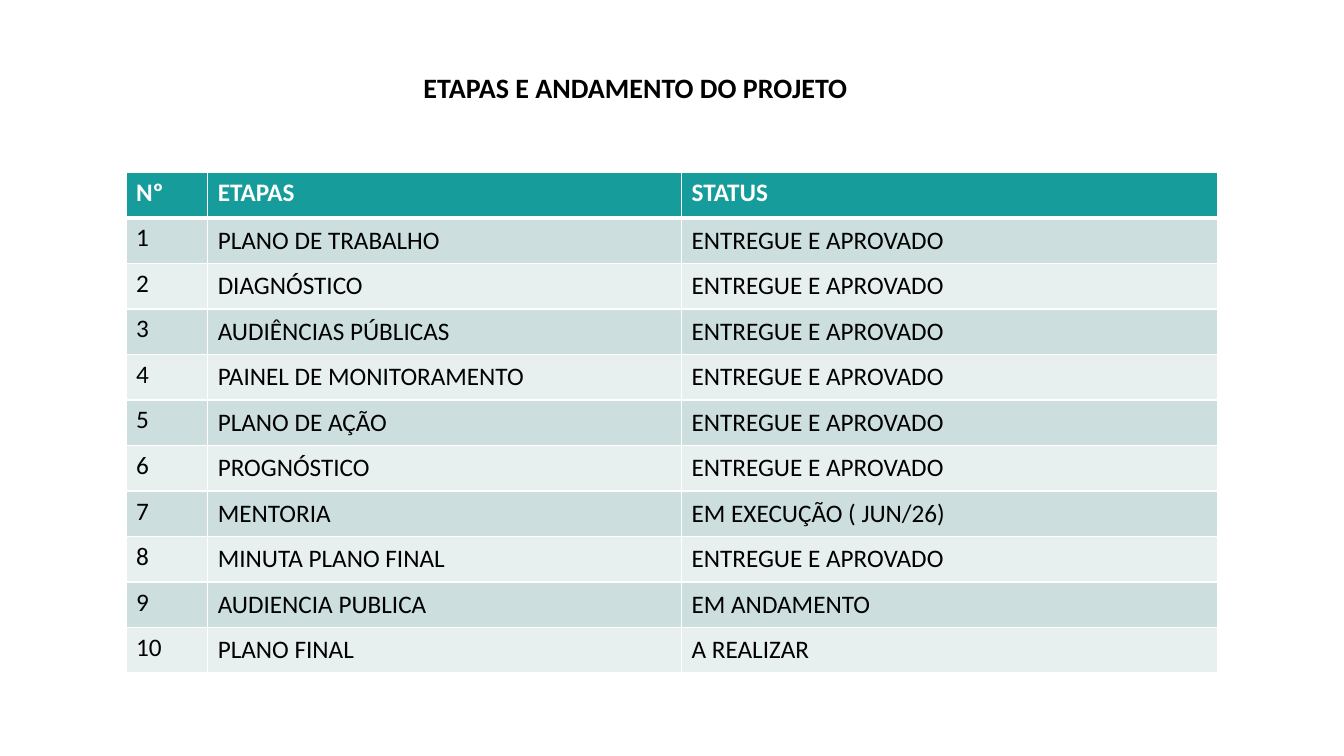
from lxml import etree
from pptx import Presentation
from pptx.dml.color import RGBColor
from pptx.enum.text import MSO_ANCHOR, PP_ALIGN
from pptx.oxml.ns import qn
from pptx.util import Inches, Pt

LEFT = PP_ALIGN.LEFT
TOP, MIDDLE = MSO_ANCHOR.TOP, MSO_ANCHOR.MIDDLE

TITLE = "ETAPAS E ANDAMENTO DO PROJETO"
HEADER = ("Nº", "ETAPAS", "STATUS")
DONE = "ENTREGUE E APROVADO"
STEPS = [
    ("PLANO DE TRABALHO", DONE),
    ("DIAGNÓSTICO", DONE),
    ("AUDIÊNCIAS PÚBLICAS", DONE),
    ("PAINEL DE MONITORAMENTO", DONE),
    ("PLANO DE AÇÃO", DONE),
    ("PROGNÓSTICO", DONE),
    ("MENTORIA", "EM EXECUÇÃO ( JUN/26)"),
    ("MINUTA PLANO FINAL", DONE),
    ("AUDIENCIA PUBLICA", "EM ANDAMENTO"),
    ("PLANO FINAL", "A REALIZAR"),
]
COLORS = {
    "header": "169C9A",
    "odd": "CCDEDE",
    "even": "E8EFEF",
    "white": "FFFFFF",
    "black": "000000",
}
COL_WIDTHS = (0.81, 4.7, 5.32)
FONT = "Calibri"


def rgb(name):
    return RGBColor.from_string(COLORS[name])


def write(tf, text, size=18, color="black", bold=False, anchor=TOP):
    tf.vertical_anchor = anchor
    p = tf.paragraphs[0]
    p.alignment = LEFT
    r = p.add_run()
    r.text = text
    r.font.name = FONT
    r.font.size = Pt(size)
    r.font.bold = bold
    r.font.color.rgb = rgb(color)


def set_borders(cell, top=1, bottom=1):
    tcPr = cell._tc.get_or_add_tcPr()
    for side, width in (("L", 1), ("R", 1), ("T", top), ("B", bottom)):
        ln = etree.SubElement(tcPr, qn(f"a:ln{side}"), w=str(Pt(width)))
        fill = etree.SubElement(ln, qn("a:solidFill"))
        etree.SubElement(fill, qn("a:srgbClr"), val=COLORS["white"])


def add_title(s):
    sp = s.shapes.title
    sp.left, sp.top = Inches(4.1), Inches(0.65)
    sp.width, sp.height = Inches(5.94), Inches(0.44)
    sp.text_frame.word_wrap = True
    write(sp.text_frame, TITLE, size=20, bold=True)


def add_steps(s):
    rows = [HEADER] + [(str(n), *step) for n, step in enumerate(STEPS, 1)]
    table = s.shapes.add_table(
        len(rows), len(HEADER), Inches(1.25), Inches(1.71),
        Inches(sum(COL_WIDTHS)), Inches(4.97)).table
    for col, width in zip(table.columns, COL_WIDTHS):
        col.width = Inches(width)
    for i, row in enumerate(rows):
        head = i == 0
        band = "header" if head else "odd" if i % 2 else "even"
        for j, text in enumerate(row):
            cell = table.cell(i, j)
            set_borders(cell, top=3 if i == 1 else 1, bottom=3 if head else 1)
            cell.fill.solid()
            cell.fill.fore_color.rgb = rgb(band)
            cell.vertical_anchor = TOP if head or j == 0 else MIDDLE
            write(cell.text_frame, text, bold=head,
                  color="white" if head else "black",
                  anchor=None)


def main():
    prs = Presentation()
    prs.slide_width, prs.slide_height = Inches(13.33), Inches(7.5)
    s = prs.slides.add_slide(prs.slide_layouts[5])
    add_title(s)
    add_steps(s)
    prs.save("out.pptx")


if __name__ == "__main__":
    main()
